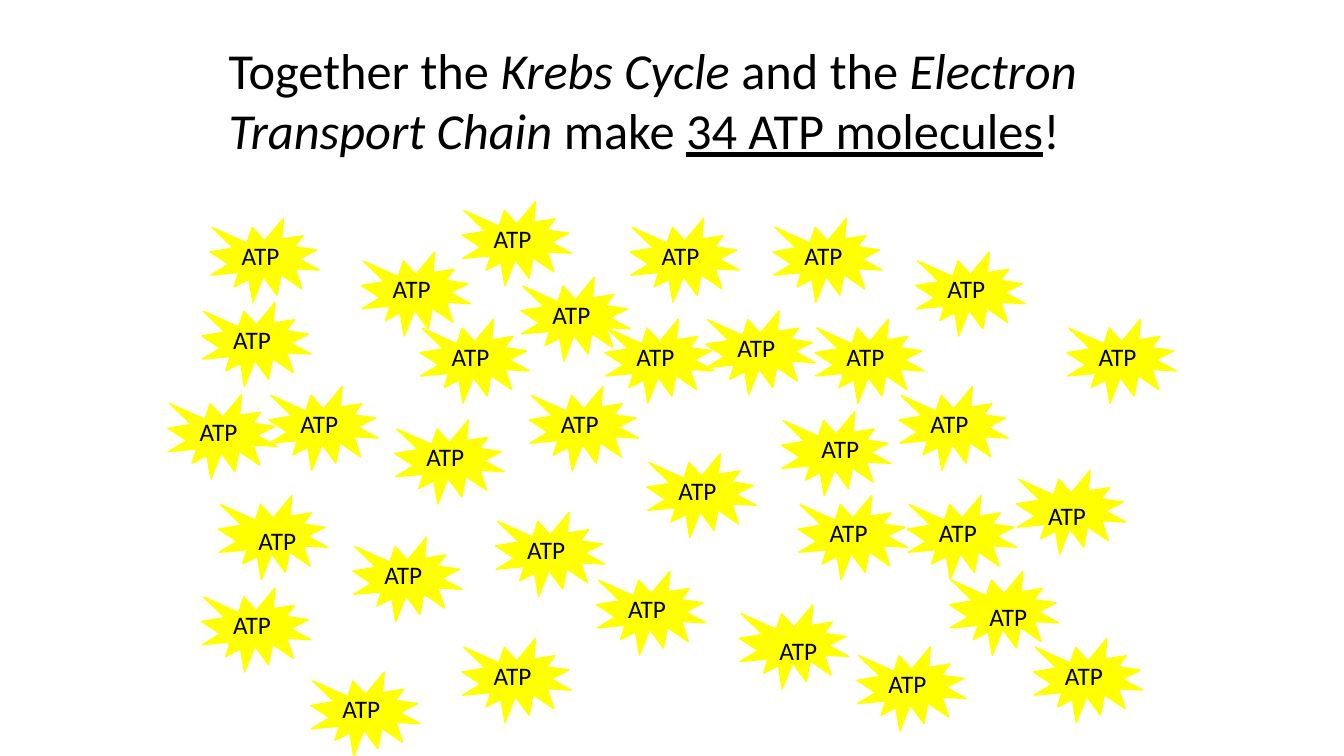
"""Build a slide that scatters 34 ATP bursts below a title."""
import pptx
import pptx.dml.color
import pptx.enum.shapes
import pptx.enum.text
import pptx.util


def rgb(value):
    return pptx.dml.color.RGBColor.from_string(value)


def apply_format(target, values):
    for key, value in values.items():
        setattr(target, key, value)


deck = pptx.Presentation()
deck.slide_width = pptx.util.Inches(13.33)
deck.slide_height = pptx.util.Inches(7.5)
slide = deck.slides.add_slide(deck.slide_layouts[5])

unit = pptx.util.Inches(1) // 12
burst_size = (13 * unit, 10 * unit)
label_size = (10 * unit, 5 * unit)
yellow = "FFFF00"
black = "000000"
heading_font = {"name": "Calibri", "size": pptx.util.Pt(36)}
label_font = {"name": "Calibri", "size": pptx.util.Pt(18)}
fitted = {
    "word_wrap": True,
    "auto_size": pptx.enum.text.MSO_AUTO_SIZE.SHAPE_TO_FIT_TEXT,
    "vertical_anchor": pptx.enum.text.MSO_ANCHOR.TOP,
}

heading = slide.shapes.title
apply_format(heading, {"left": 26 * unit, "top": 4 * unit,
                       "width": 108 * unit, "height": pptx.util.Inches(1.31)})
apply_format(heading.text_frame, fitted)
sentence = heading.text_frame.paragraphs[0]
sentence.alignment = pptx.enum.text.PP_ALIGN.LEFT
for words, emphasis in [
    ("Together the ", {}),
    ("Krebs Cycle ", {"italic": True}),
    ("and the ", {}),
    ("Electron Transport Chain ", {"italic": True}),
    ("make ", {}),
    ("34 ATP molecules", {"underline": True}),
    ("!", {}),
]:
    phrase = sentence.add_run()
    phrase.text = words
    apply_format(phrase.font, {**heading_font, **emphasis})
    phrase.font.color.rgb = rgb(black)

molecules = [
    (25, 26), (84, 37), (77, 54), (24, 36), (62, 33), (107, 46), (109, 30),
    (43, 30), (127, 38), (123, 76), (47, 50), (59, 61), (55, 76), (71, 68),
    (102, 77), (37, 80), (97, 38), (63, 46), (50, 38), (24, 70), (26, 59),
    (88, 72), (42, 64), (113, 68), (95, 59), (55, 24), (92, 26), (32, 46),
    (20, 47), (72, 38), (108, 59), (93, 49), (121, 56), (75, 26),
]
usual_offset = (1, 2)
shifted_offsets = {(26, 59): (2, 3), (88, 72): (2, 3), (113, 68): (2, 3),
                   (93, 49): (2, 2), (121, 56): (1, 3)}

for column, row in molecules:
    burst = slide.shapes.add_shape(
        pptx.enum.shapes.MSO_SHAPE.EXPLOSION1, column * unit, row * unit, *burst_size)
    burst.shadow.inherit = False
    burst.fill.solid()
    burst.fill.fore_color.rgb = rgb(yellow)
    burst.line.color.rgb = rgb(yellow)
    burst.line.width = pptx.util.Pt(1)

    right, down = shifted_offsets.get((column, row), usual_offset)
    label = slide.shapes.add_textbox(
        (column + right) * unit, (row + down) * unit, *label_size)
    apply_format(label.text_frame, fitted)
    caption = label.text_frame.paragraphs[0]
    caption.text = "ATP"
    caption.alignment = pptx.enum.text.PP_ALIGN.CENTER
    apply_format(caption.font, label_font)
    caption.font.color.rgb = rgb(black)

deck.save("out.pptx")
